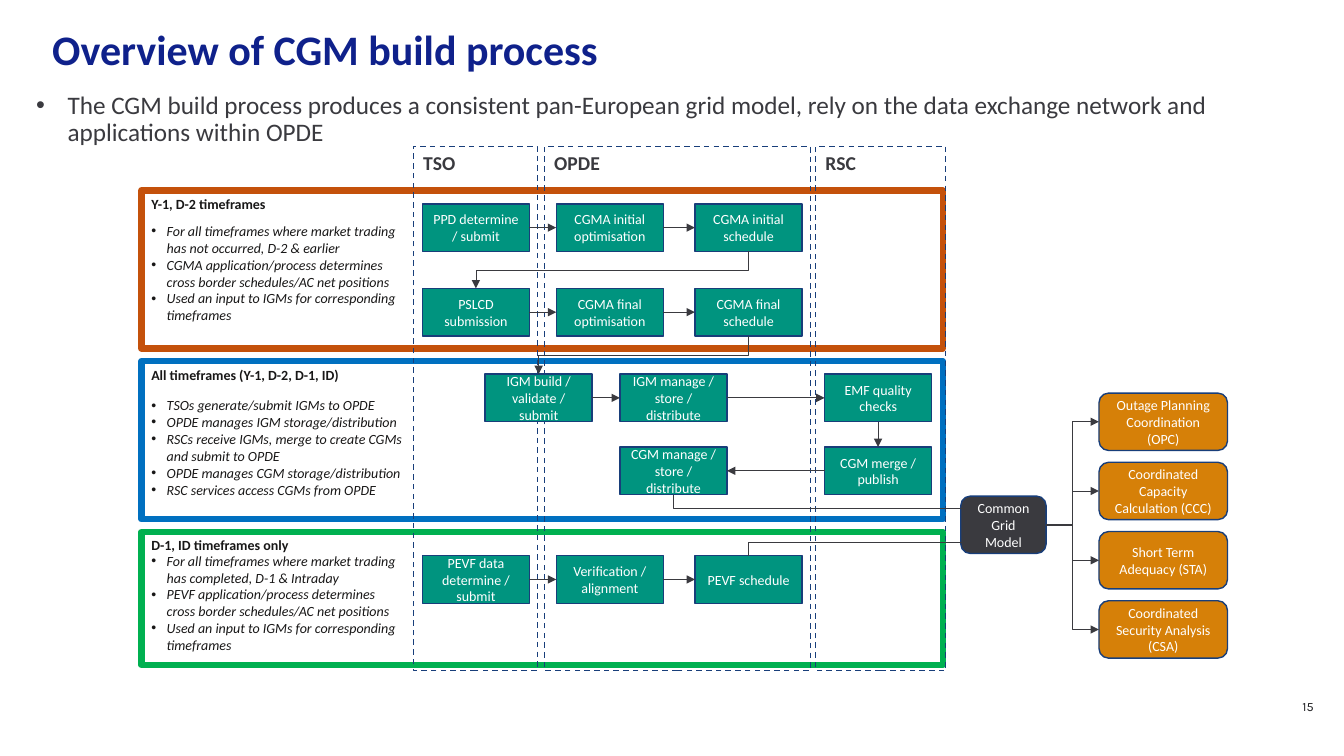
from dataclasses import dataclass

from lxml import etree
from pptx import Presentation
from pptx.dml.color import RGBColor
from pptx.enum.dml import MSO_LINE
from pptx.enum.shapes import MSO_CONNECTOR, MSO_SHAPE
from pptx.enum.text import MSO_ANCHOR, PP_ALIGN
from pptx.oxml.ns import qn
from pptx.util import Pt

RECTANGLE, ROUNDED = MSO_SHAPE.RECTANGLE, MSO_SHAPE.ROUNDED_RECTANGLE
STRAIGHT, ELBOW = MSO_CONNECTOR.STRAIGHT, MSO_CONNECTOR.ELBOW
LEFT, CENTER, RIGHT = PP_ALIGN.LEFT, PP_ALIGN.CENTER, PP_ALIGN.RIGHT
TOP, MIDDLE = MSO_ANCHOR.TOP, MSO_ANCHOR.MIDDLE
SIDE_TOP, SIDE_LEFT, SIDE_BOTTOM, SIDE_RIGHT = range(4)


@dataclass(frozen=True)
class Theme:
    font: str = "Calibri"
    number_font: str = "Karla"
    title: str = "0F218B"
    grey: str = "3A3A3F"
    black: str = "181717"
    number: str = "1D1D20"
    white: str = "FFFFFF"
    navy: str = "183E7A"
    green: str = "00947F"
    amber: str = "D68008"
    title_size: float = 30
    body_size: float = 18
    lane_size: float = 14
    small_size: float = 10
    number_size: float = 9


@dataclass(frozen=True)
class Style:
    size: float
    color: str
    bold: bool = False
    italic: bool = False
    align: PP_ALIGN = LEFT
    anchor: MSO_ANCHOR = TOP
    font: str = "Calibri"
    spacing: object = None
    indent: float = 0


@dataclass(frozen=True)
class Box:
    left: float
    top: float
    width: float
    height: float


@dataclass(frozen=True)
class Panel:
    title: str
    color: str
    top: float
    height: float
    list_top: float
    bullets: tuple[str, ...]


THEME = Theme()
TITLE = Style(THEME.title_size, THEME.title, bold=True, anchor=MIDDLE, spacing=Pt(32))
BODY = Style(THEME.body_size, THEME.grey, spacing=0.9, indent=22.5)
NUMBER = Style(THEME.number_size, THEME.number, align=RIGHT, anchor=MIDDLE,
               font=THEME.number_font, spacing=Pt(9))
LANE = Style(THEME.lane_size, THEME.grey, bold=True)
PANEL = Style(THEME.small_size, THEME.black, bold=True)
BULLETS = Style(THEME.small_size, THEME.black, italic=True, indent=11)
STEP = Style(THEME.small_size, THEME.white, align=CENTER, anchor=MIDDLE)

PANELS = [
    Panel("Y-1, D-2 timeframes", "C4510B", 136, 113, 155.5, (
        "For all timeframes where market trading has not occurred, D-2 & earlier",
        "CGMA application/process determines cross border schedules/AC net positions",
        "Used an input to IGMs for corresponding timeframes")),
    Panel("All timeframes (Y-1, D-2, D-1, ID)", "0070C0", 258, 113, 280, (
        "TSOs generate/submit IGMs to OPDE",
        "OPDE manages IGM storage/distribution",
        "RSCs receive IGMs, merge to create CGMs and submit to OPDE",
        "OPDE manages CGM storage/distribution",
        "RSC services access CGMs from OPDE")),
    Panel("D-1, ID timeframes only", "00B050", 380, 95, 391, (
        "For all timeframes where market trading has completed, D-1 & Intraday",
        "PEVF application/process determines cross border schedules/AC net positions",
        "Used an input to IGMs for corresponding timeframes")),
]
LANES = [("TSO", 295.2, 88.6), ("OPDE", 388.8, 190), ("RSC", 582.5, 92.9)]

# Process steps: row top, then (left, label) in flow order
COLUMNS = (301.7, 397.3, 496.4)
STEP_ROWS = [
    (145.6, COLUMNS, ("PPD determine / submit", "CGMA initial optimisation", "CGMA initial schedule")),
    (206, COLUMNS, ("PSLCD submission", "CGMA final optimisation", "CGMA final schedule")),
    (267.2, (346.5, 442.8, 589), ("IGM build / validate / submit",
                                  "IGM manage / store / distribute", "EMF quality checks")),
    (319.3, (589, 442.8), ("CGM merge / publish", "CGM manage / store / distribute")),
    (396.9, COLUMNS, ("PEVF data determine / submit", "Verification / alignment", "PEVF schedule")),
]
SERVICES = ("Outage Planning Coordination (OPC)", "Coordinated Capacity Calculation (CCC)",
            "Short Term Adequacy (STA)", "Coordinated Security Analysis (CSA)")
SERVICE_PITCH = 49.45
MODEL_ENTRY_X = 696.3


def write(shape, texts: tuple[str, ...], style: Style) -> None:
    frame = shape.text_frame
    frame.word_wrap = True
    frame.vertical_anchor = style.anchor
    for index, text in enumerate(texts):
        paragraph = frame.paragraphs[0] if index == 0 else frame.add_paragraph()
        if style.indent:
            properties = paragraph._p.get_or_add_pPr()
            properties.set("marL", str(Pt(style.indent)))
            properties.set("indent", str(-Pt(style.indent)))
            etree.SubElement(properties, qn("a:buFont")).set("typeface", "Arial")
            etree.SubElement(properties, qn("a:buChar")).set("char", "•")
        paragraph.alignment = style.align
        if style.spacing:
            paragraph.line_spacing = style.spacing
        run = paragraph.add_run()
        run.text = text
        run.font.name, run.font.size = style.font, Pt(style.size)
        run.font.bold, run.font.italic = style.bold, style.italic
        run.font.color.rgb = RGBColor.from_string(style.color)


def add_text(slide, box: Box, texts: tuple[str, ...], style: Style) -> None:
    shape = slide.shapes.add_textbox(Pt(box.left), Pt(box.top), Pt(box.width), Pt(box.height))
    write(shape, texts, style)


def add_box(slide, box: Box, text: str, style: Style, fill: str = "", line: str = THEME.navy,
            line_width: float = 1, kind: MSO_SHAPE = RECTANGLE, dashed: bool = False):
    shape = slide.shapes.add_shape(kind, Pt(box.left), Pt(box.top), Pt(box.width), Pt(box.height))
    shape.shadow.inherit = False
    if fill:
        shape.fill.solid()
        shape.fill.fore_color.rgb = RGBColor.from_string(fill)
    else:
        shape.fill.background()
    shape.line.color.rgb = RGBColor.from_string(line)
    shape.line.width = Pt(line_width)
    if dashed:
        shape.line.dash_style = MSO_LINE.DASH
    write(shape, (text,), style)
    return shape


def finish_arrow(connector) -> None:
    connector.line.color.rgb = RGBColor.from_string(THEME.grey)
    connector.line.width = Pt(0.5)
    etree.SubElement(connector.line._get_or_add_ln(), qn("a:tailEnd")).set("type", "triangle")
    etree.SubElement(connector._element.spPr, qn("a:effectLst"))


def join(slide, start, end, start_side: int = SIDE_RIGHT, end_side: int = SIDE_LEFT,
         kind: MSO_CONNECTOR = STRAIGHT) -> None:
    connector = slide.shapes.add_connector(kind, 0, 0, 0, 0)
    connector.begin_connect(start, start_side)
    connector.end_connect(end, end_side)
    finish_arrow(connector)


def add_vertical_elbow(slide, start: tuple[float, float], end: tuple[float, float],
                       preset: str = "bentConnector3") -> None:
    """Elbow that leaves its start vertically: a quarter-turned elbow."""
    (x1, y1), (x2, y2) = start, end
    middle_x, middle_y = (x1 + x2) / 2, (y1 + y2) / 2
    half_x, half_y = (x2 - x1) / 2, (y2 - y1) / 2
    connector = slide.shapes.add_connector(ELBOW, Pt(middle_x - half_y), Pt(middle_y + half_x),
                                           Pt(middle_x + half_y), Pt(middle_y - half_x))
    properties = connector._element.spPr
    properties.find(qn("a:xfrm")).set("rot", "5400000")
    properties.find(qn("a:prstGeom")).set("prst", preset)
    finish_arrow(connector)


def edge(shape, bottom: bool = False) -> tuple[float, float]:
    return shape.left.pt + shape.width.pt / 2, shape.top.pt + (shape.height.pt if bottom else 0)


def main() -> None:
    presentation = Presentation()
    presentation.slide_width, presentation.slide_height = Pt(960), Pt(540)
    slide = presentation.slides.add_slide(presentation.slide_layouts[6])

    # Headings and page number
    add_text(slide, Box(30.2, 23, 915, 28), ("Overview of CGM build process",), TITLE)
    add_text(slide, Box(18.7, 62.6, 880.6, 60), (
        "The CGM build process produces a consistent pan-European grid model, rely on the data "
        "exchange network and applications within OPDE",), BODY)
    add_text(slide, Box(486, 491, 459.4, 28.8), ("15",), NUMBER)

    # Timeframe panels and lanes
    for panel in PANELS:
        add_box(slide, Box(101, panel.top, 572.4, panel.height), panel.title, PANEL,
                line=panel.color, line_width=4.5)
        add_text(slide, Box(101, panel.list_top, 195.5, 80), panel.bullets, BULLETS)
    for name, left, width in LANES:
        add_box(slide, Box(left, 104.6, width, 374.4), name, LANE, dashed=True)

    # Process steps, joined along each row
    rows = []
    for top, lefts, labels in STEP_ROWS:
        steps = [add_box(slide, Box(left, top, 76.5, 34), label, STEP, THEME.green)
                 for left, label in zip(lefts, labels)]
        for start, end in zip(steps, steps[1:]):
            back = end.left < start.left
            join(slide, start, end, *((SIDE_LEFT, SIDE_RIGHT) if back else (SIDE_RIGHT, SIDE_LEFT)))
        rows.append(steps)
    initial, final, igm, cgm, pevf = rows
    join(slide, igm[-1], cgm[0], SIDE_BOTTOM, SIDE_TOP)

    # Common model and the services fed by it
    model = add_box(slide, Box(686.3, 354.4, 61, 41), "Common Grid Model", STEP, THEME.grey, kind=ROUNDED)
    for index, label in enumerate(SERVICES):
        service = add_box(slide, Box(785, 280.8 + index * SERVICE_PITCH, 91.8, 41), label, STEP,
                          THEME.amber, kind=ROUNDED)
        join(slide, model, service, kind=ELBOW)

    # Links between rows and into the model
    add_vertical_elbow(slide, edge(initial[-1], bottom=True), edge(final[0]))
    add_vertical_elbow(slide, edge(final[-1], bottom=True), edge(igm[0]))
    add_vertical_elbow(slide, edge(cgm[-1], bottom=True), (MODEL_ENTRY_X, 362.8), "bentConnector2")
    add_vertical_elbow(slide, edge(pevf[-1]), (MODEL_ENTRY_X, 387.4), "bentConnector2")

    presentation.save("out.pptx")


if __name__ == "__main__":
    main()
